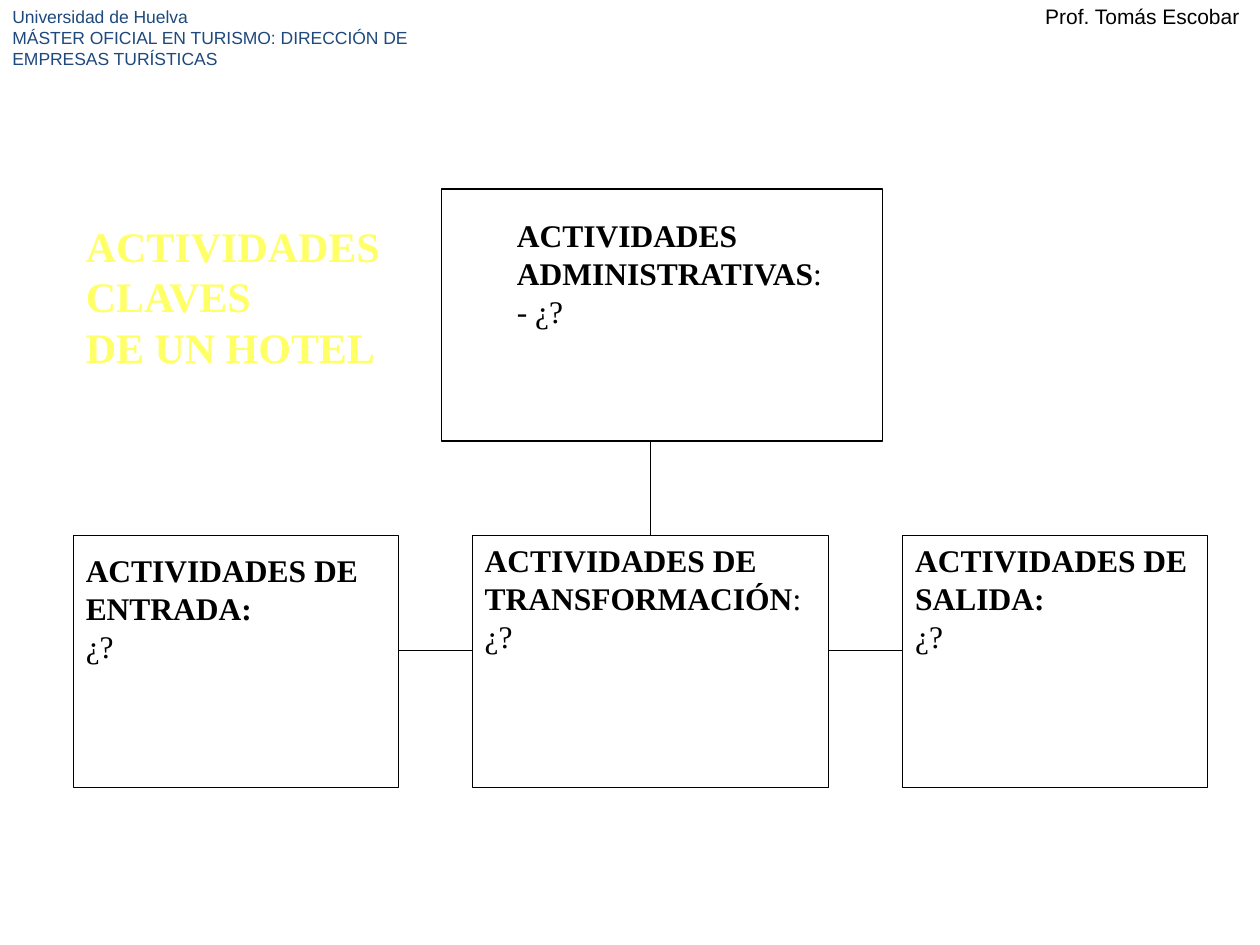
from dataclasses import dataclass

from lxml import etree
from pptx import Presentation
from pptx.dml.color import RGBColor
from pptx.enum.shapes import MSO_CONNECTOR, MSO_SHAPE
from pptx.enum.text import MSO_ANCHOR
from pptx.oxml.ns import qn
from pptx.util import Cm, Pt

RECTANGLE = MSO_SHAPE.RECTANGLE
STRAIGHT = MSO_CONNECTOR.STRAIGHT
TOP = MSO_ANCHOR.TOP


@dataclass(frozen=True)
class Theme:
    ink: RGBColor = RGBColor(0x00, 0x00, 0x00)
    header: RGBColor = RGBColor(0x1F, 0x49, 0x7D)
    title: RGBColor = RGBColor(0xFF, 0xFF, 0x66)
    sans: str = "Arial"
    serif: str = "Times New Roman"
    header_size: int = 10
    author_size: int = 12
    body_size: int = 18
    title_size: int = 24
    line_width: float = 0.75


THEME = Theme()
BODY = {"name": THEME.serif, "size": Pt(THEME.body_size)}
TITLE = {"name": THEME.serif, "size": Pt(THEME.title_size)}
HEADER = {"name": THEME.sans, "size": Pt(THEME.header_size)}
AUTHOR = {"name": THEME.sans, "size": Pt(THEME.author_size)}


def add_text(page, box, paragraphs, font, color, wrap=True):
    frame = page.shapes.add_textbox(*map(Cm, box)).text_frame
    frame.word_wrap = wrap
    frame.vertical_anchor = TOP
    for index, spans in enumerate(paragraphs):
        para = frame.add_paragraph() if index else frame.paragraphs[0]
        for text, bold in spans:
            span = para.add_run()
            span.text = text
            for name, value in {**font, "bold": bold}.items():
                setattr(span.font, name, value)
            span.font.color.rgb = color


def style_line(line):
    line.color.rgb = THEME.ink
    line.width = Pt(THEME.line_width)


def add_activity(page, box, text_box, paragraphs, wrap):
    left, top, _, _ = box
    shift_x, shift_y, width, height = text_box
    frame = page.shapes.add_shape(RECTANGLE, *map(Cm, box))
    frame.shadow.inherit = False
    frame.fill.background()
    style_line(frame.line)
    place = (left + shift_x, top + shift_y, width, height)
    add_text(page, place, paragraphs, BODY, THEME.ink, wrap)
    return frame


def add_link(page, start, end):
    link = page.shapes.add_connector(STRAIGHT, *map(Cm, start + end))
    style_line(link.line)
    etree.SubElement(link._element.spPr, qn("a:effectLst"))
    return link


def add_header(page, box):
    left, top, width, height = box
    lines = ["Universidad de Huelva",
             "MÁSTER OFICIAL EN TURISMO: DIRECCIÓN DE EMPRESAS TURÍSTICAS"]
    add_text(page, (left, top, 8.61, height),
             [[(line, False)] for line in lines], HEADER, THEME.header)
    author_width = 4.5
    add_text(page, (left + width - author_width - 0.08, top - 0.05, author_width, 0.76),
             [[("Prof. Tomás Escobar", False)]], AUTHOR, THEME.ink, False)


def add_title(page, box):
    lines = ["ACTIVIDADES CLAVES", "DE UN HOTEL"]
    add_text(page, box, [[(line, True)] for line in lines], TITLE, THEME.title)


def add_diagram(page, box):
    left, top, width, height = box
    box_height = 5.08
    row_top = top + height - box_height
    gap = 1.49
    widths = {"input": 6.55, "process": 7.19, "output": 6.15}
    texts = {
        "input": ((0, 0.2, 6.15, 4.39), False,
                  [[("ACTIVIDADES DE", True)], [("ENTRADA:", True)], [("¿?", False)]]),
        "process": ((0, 0, 6.91, 3.3), False,
                    [[("ACTIVIDADES DE", True)],
                     [("TRANSFORMACIÓN", True), (":", False)], [("¿?", False)]]),
        "output": ((0, 0, 6.4, 3.3), True,
                   [[("ACTIVIDADES DE SALIDA:", True)], [("¿?", False)]]),
    }
    add_activity(page, (left + 7.42, top, 8.89, box_height), (1.27, 0.43, 11.05, 2.54),
                 [[("ACTIVIDADES ADMINISTRATIVAS", True), (":", False)], [("- ¿?", False)]],
                 True)

    frames = {}
    row_left = left
    link_y = row_top + 2.33
    for name, box_width in widths.items():
        text_box, wrap, paragraphs = texts[name]
        frames[name] = add_activity(page, (row_left, row_top, box_width, box_height),
                                    text_box, paragraphs, wrap)
        if name != "input":
            add_link(page, (row_left - gap, link_y), (row_left, link_y))
        row_left += box_width + gap

    center = left + widths["input"] + gap + widths["process"] / 2
    link = add_link(page, (center, top + box_height), (center, row_top))
    link.end_connect(frames["process"], 0)


def main():
    deck = Presentation()
    deck.slide_width, deck.slide_height = Cm(25.4), Cm(19.05)
    page = deck.slides.add_slide(deck.slide_layouts[6])
    add_header(page, (0, 0, 25.4, 2.21))
    add_title(page, (1.48, 4.32, 6.55, 3.3))
    add_diagram(page, (1.48, 3.81, 22.87, 12.06))
    deck.save("out.pptx")


if __name__ == "__main__":
    main()
